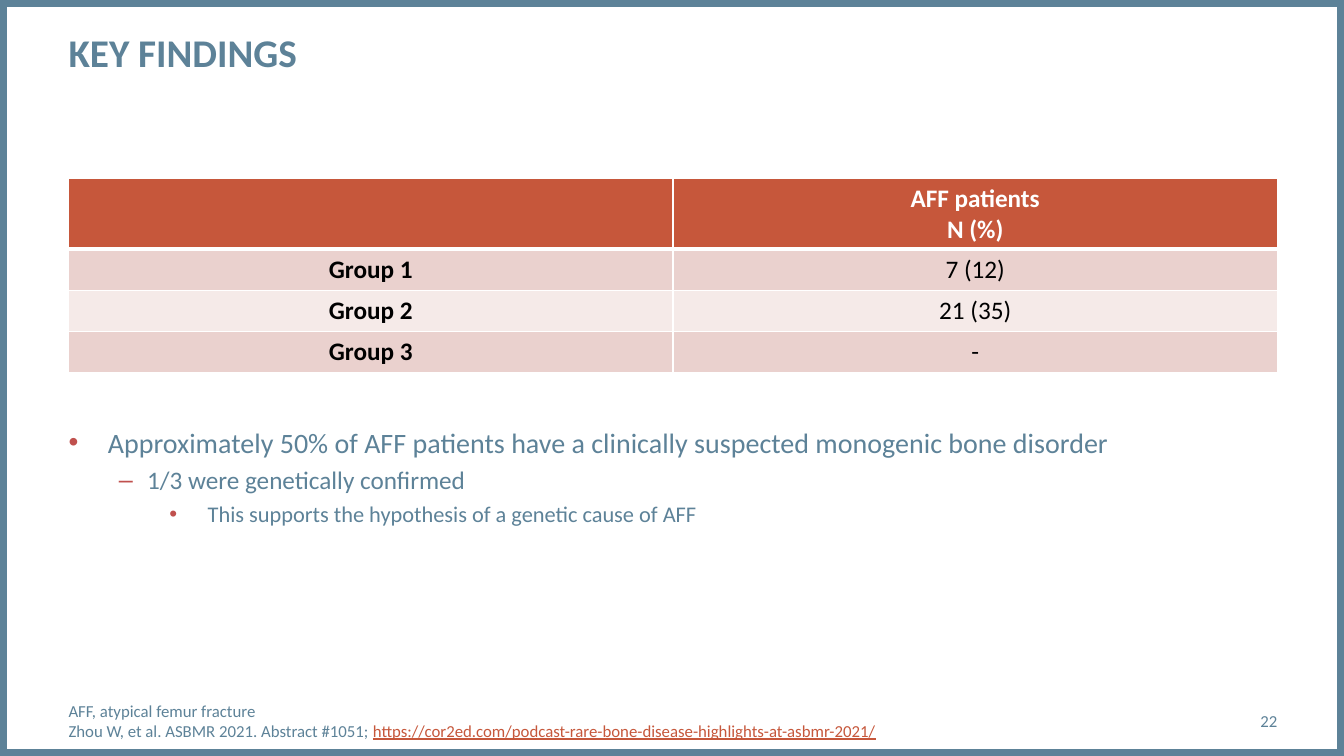
from lxml import etree
from pptx import Presentation, util as u
from pptx.dml.color import RGBColor
from pptx.enum import shapes, text
from pptx.oxml import ns

COLORS = {
    "slate": "5D8298",
    "rust": "C6573B",
    "bullet": "C0504D",
    "band": "EAD1CE",
    "pale": "F5EAE8",
    "white": "FFFFFF",
    "black": "000000",
}
LEFT, WIDTH = 0.68, 11.99


def add_run(paragraph, wording, color, **formats):
    run = paragraph.add_run()
    run.text = wording
    run.font.color.rgb = RGBColor.from_string(COLORS[color])
    for name, value in {"name": "Calibri", **formats}.items():
        setattr(run.font, name, value)


def add_text_frame(left, top, width, height, anchor):
    box = slide.shapes.add_textbox(*map(u.Inches, (left, top, width, height)))
    formats = {"word_wrap": True, "vertical_anchor": anchor, "margin_left": 0,
               "margin_right": 0, "margin_top": 0, "margin_bottom": 0}
    for name, value in formats.items():
        setattr(box.text_frame, name, value)
    return box.text_frame


presentation = Presentation()
presentation.slide_width = u.Inches(13.33)
presentation.slide_height = u.Inches(7.5)
slide = presentation.slides.add_slide(presentation.slide_layouts[6])
TOP, MIDDLE = text.MSO_ANCHOR.TOP, text.MSO_ANCHOR.MIDDLE

# Frame around the slide
frame = slide.shapes.add_shape(shapes.MSO_SHAPE.RECTANGLE, 0, 0,
                               presentation.slide_width, presentation.slide_height)
frame.shadow.inherit = False
frame.fill.background()
frame.line.color.rgb = RGBColor.from_string(COLORS["slate"])
frame.line.width = u.Pt(10)

# Title
title = add_text_frame(LEFT, 0.28, 9.56, 0.94, TOP)
add_run(title.paragraphs[0], "KEY FINDINGS", "slate", size=u.Pt(28), bold=True)

# Findings: wording, size, bullet, text indent, hanging indent, space before
findings = [
    ("Approximately 50% of AFF patients have a clinically suspected monogenic bone disorder",
     20, "•", 0.39, 0.39, 0),
    ("1/3 were genetically confirmed", 18, "–", 0.78, 0.28, 4),
    ("This supports the hypothesis of a genetic cause of AFF", 16, "•", 1.38, 0.38, 4),
]
body = add_text_frame(LEFT, 4.22, WIDTH, 2.28, TOP)
for level, (wording, size, bullet, indent, hanging, space) in enumerate(findings):
    paragraph = body.add_paragraph() if level else body.paragraphs[0]
    paragraph.level = level
    properties = paragraph._p.get_or_add_pPr()
    properties.set("marL", str(u.Inches(indent)))
    properties.set("indent", str(-u.Inches(hanging)))
    bullet_color = etree.SubElement(properties, ns.qn("a:buClr"))
    etree.SubElement(bullet_color, ns.qn("a:srgbClr"), val=COLORS["bullet"])
    etree.SubElement(properties, ns.qn("a:buFont"), typeface="Arial")
    etree.SubElement(properties, ns.qn("a:buChar"), char=bullet)
    paragraph.space_before = u.Pt(space)
    add_run(paragraph, wording, "slate", size=u.Pt(size))

# Slide number
number = add_text_frame(11.5, 6.95, 1.17, 0.4, MIDDLE)
number.paragraphs[0].alignment = text.PP_ALIGN.RIGHT
add_run(number.paragraphs[0], "22", "slate", size=u.Pt(12))

# Footnote and reference
footer = add_text_frame(LEFT, 6.95, 8.88, 0.4, MIDDLE)
add_run(footer.paragraphs[0], "AFF, atypical femur fracture", "slate", size=u.Pt(12))
reference = footer.add_paragraph()
add_run(reference, "Zhou W, et al. ASBMR 2021. Abstract #1051; ", "slate", size=u.Pt(12))
add_run(reference, "https://cor2ed.com/podcast-rare-bone-disease-highlights-at-asbmr-2021/",
        "rust", size=u.Pt(12), underline=True)

# Table of patient groups
rows = [
    ("", "AFF patients\nN (%)"),
    ("Group 1", "7 (12)"),
    ("Group 2", "21 (35)"),
    ("Group 3", "-"),
]
heights = [0.7, 0.41, 0.41, 0.41]
table = slide.shapes.add_table(len(rows), 2, u.Inches(LEFT), u.Inches(1.77),
                               u.Inches(WIDTH), u.Inches(sum(heights))).table
for row_index, row in enumerate(rows):
    table.rows[row_index].height = u.Inches(heights[row_index])
    header = row_index == 0
    fill = "rust" if header else "band" if row_index % 2 else "pale"
    for column_index, wording in enumerate(row):
        cell = table.cell(row_index, column_index)
        cell.vertical_anchor = MIDDLE

        # White borders, thicker below the header
        widths = {"L": 1, "R": 1, "T": 3 if row_index == 1 else 1, "B": 3 if header else 1}
        for side, width in widths.items():
            border = etree.SubElement(cell._tc.get_or_add_tcPr(), ns.qn("a:ln" + side),
                                      w=str(u.Pt(width)))
            border_fill = etree.SubElement(border, ns.qn("a:solidFill"))
            etree.SubElement(border_fill, ns.qn("a:srgbClr"), val=COLORS["white"])
        cell.fill.solid()
        cell.fill.fore_color.rgb = RGBColor.from_string(COLORS[fill])

        for line_index, line in enumerate(wording.split("\n") if wording else []):
            paragraph = (cell.text_frame.add_paragraph() if line_index
                         else cell.text_frame.paragraphs[0])
            paragraph.alignment = text.PP_ALIGN.CENTER
            add_run(paragraph, line, "white" if header else "black", size=u.Pt(18),
                    bold=header or column_index == 0)

presentation.save("out.pptx")
